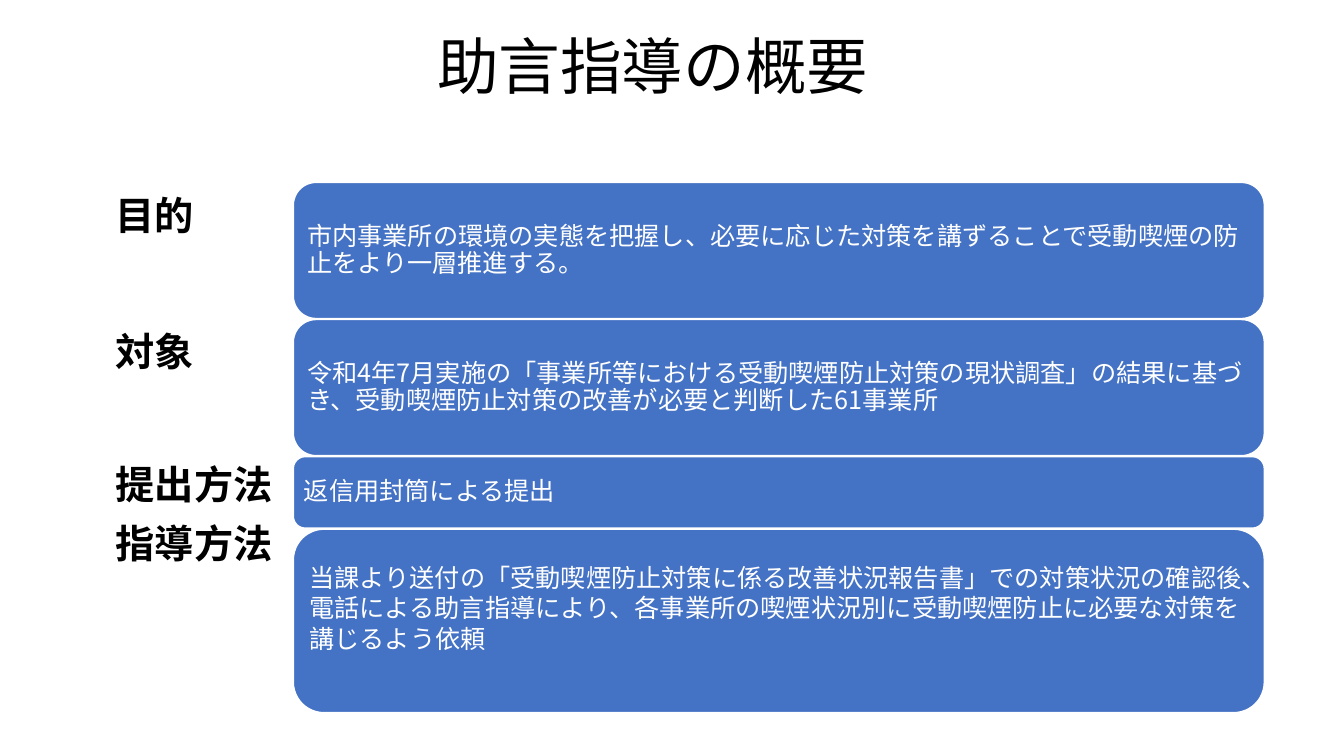
from pptx import Presentation
from pptx.dml.color import RGBColor
from pptx.enum.shapes import MSO_SHAPE
from pptx.enum.text import MSO_ANCHOR, PP_ALIGN
from pptx.oxml.ns import qn
from pptx.util import Pt

PX = 9144  # 100 px to the inch
FONT = "Noto Sans CJK JP"
COLORS = {"ink": "000000", "card": "4472C4", "paper": "FFFFFF"}
ROUNDED = MSO_SHAPE.ROUNDED_RECTANGLE
MIDDLE, TOP = MSO_ANCHOR.MIDDLE, MSO_ANCHOR.TOP
LEFT, CENTER = PP_ALIGN.LEFT, PP_ALIGN.CENTER

CARD_LEFT, CARD_WIDTH, CARDS_TOP, CARD_GAP = 291, 963, 181, 1
CARD_INSET = 7

# Heading and the space above it in points
HEADINGS = [("目的", 0), ("対象", 67), ("提出方法", 65), ("指導方法", 12)]

# Text, card height, bottom inset, line spacing
CARDS = [
    ("市内事業所の環境の実態を把握し、必要に応じた対策を講ずることで"
     "受動喫煙の防止をより一層推進する。", 135, CARD_INSET, 0.9),
    ("令和4年7月実施の「事業所等における受動喫煙防止対策の現状調査」の結果に基づき、"
     "受動喫煙防止対策の改善が必要と判断した61事業所", 135, CARD_INSET, 0.9),
    ("返信用封筒による提出", 71, CARD_INSET, 0.9),
    ("当課より送付の「受動喫煙防止対策に係る改善状況報告書」での対策状況の確認後、"
     "電話による助言指導により、各事業所の喫煙状況別に受動喫煙防止に必要な対策を"
     "講じるよう依頼", 182, 33, 1.0),
]


def px(*lengths):
    return [length * PX for length in lengths]


def rgb(name):
    return RGBColor.from_string(COLORS[name])


def write(paragraph, text, size, color, bold=False, align=LEFT, spacing=0.9, before=0):
    paragraph.alignment = align
    paragraph.line_spacing = spacing
    paragraph.space_before = Pt(before)
    run = paragraph.add_run()
    run.text = text
    font = run.font
    font.size, font.bold, font.name = Pt(size), bold, FONT
    font.color.rgb = rgb(color)
    east_asian = run._r.get_or_add_rPr().makeelement(qn("a:ea"), {"typeface": FONT})
    run._r.rPr.find(qn("a:latin")).addnext(east_asian)


def set_title(slide, text):
    title = slide.shapes.title
    title.left, title.top, title.width, title.height = px(80, 29, 1135, 80)
    title.text_frame.vertical_anchor = MIDDLE
    write(title.text_frame.paragraphs[0], text, 44, "ink", align=CENTER)


def add_headings(slide):
    frame = slide.shapes.add_textbox(*px(105, 190, 186, 517)).text_frame
    frame.word_wrap = True
    frame.vertical_anchor = TOP
    for index, (heading, before) in enumerate(HEADINGS):
        paragraph = frame.add_paragraph() if index else frame.paragraphs[0]
        write(paragraph, heading, 28, "ink", bold=True, before=before)


def add_card(slide, top, text, height, bottom_inset, spacing):
    card = slide.shapes.add_shape(ROUNDED, *px(CARD_LEFT, top, CARD_WIDTH, height))
    card.shadow.inherit = False
    card.fill.solid()
    card.fill.fore_color.rgb = rgb("card")
    card.line.color.rgb = rgb("paper")
    card.line.width = Pt(1)
    frame = card.text_frame
    frame.word_wrap = True
    frame.vertical_anchor = MIDDLE
    frame.margin_left, frame.margin_top, frame.margin_right, frame.margin_bottom = px(
        CARD_INSET, CARD_INSET, CARD_INSET, bottom_inset)
    write(frame.paragraphs[0], text, 18, "paper", spacing=spacing)


def main():
    deck = Presentation()
    deck.slide_width, deck.slide_height = px(1333, 750)
    slide = deck.slides.add_slide(deck.slide_layouts.get_by_name("Title Only"))
    set_title(slide, "助言指導の概要")
    add_headings(slide)
    top = CARDS_TOP
    for text, height, bottom_inset, spacing in CARDS:
        add_card(slide, top, text, height, bottom_inset, spacing)
        top += height + CARD_GAP
    deck.save("out.pptx")


if __name__ == "__main__":
    main()
